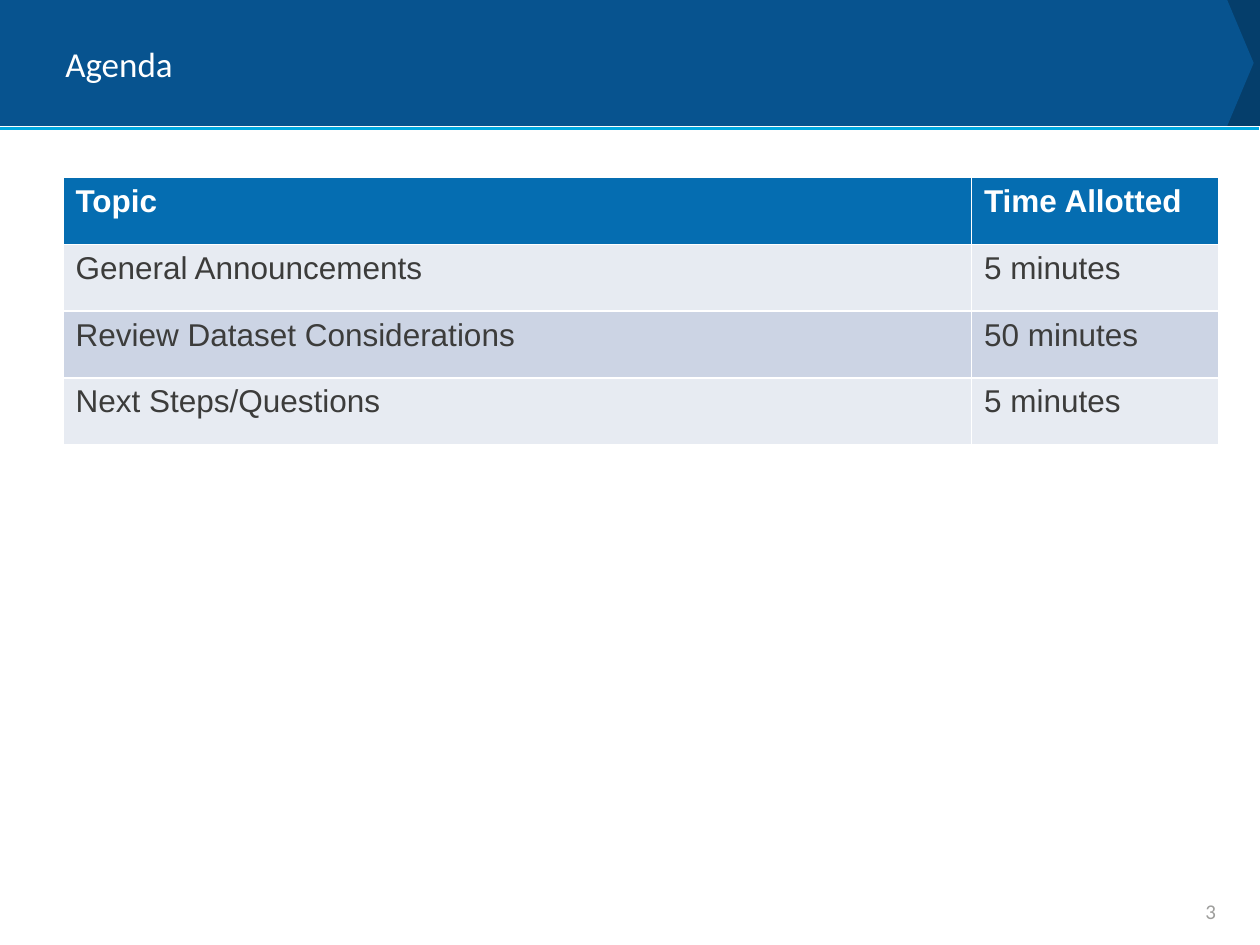
from dataclasses import dataclass

from lxml.etree import SubElement
from pptx import Presentation
from pptx.dml.color import RGBColor
from pptx.enum.shapes import MSO_CONNECTOR, MSO_SHAPE
from pptx.enum.text import MSO_ANCHOR, PP_ALIGN
from pptx.oxml.ns import qn
from pptx.util import Inches, Pt

COLORS = {
    "navy": "053E6B", "banner": "07538F", "accent": "00A8E1",
    "header": "056DB1", "light": "E7EBF2", "band": "CCD4E4",
    "white": "FFFFFF", "ink": "3C3C3B", "grey": "9E9E9C",
}
AGENDA = [
    ("Topic", "Time Allotted"),
    ("General Announcements", "5 minutes"),
    ("Review Dataset Considerations", "50 minutes"),
    ("Next Steps/Questions", "5 minutes"),
]
COL_WIDTHS = (7.21, 1.96)
ROW_HEIGHT = 0.53


@dataclass
class Banner:
    left: float
    width: float
    adj: float
    color: str


@dataclass
class Label:
    text: str
    box: tuple[float, float, float, float]
    size: int
    color: str
    align: PP_ALIGN


BANNERS = [Banner(9.55, 0.45, 0, "navy"), Banner(0, 9.95, 0.21, "banner")]
LABELS = [
    Label("Agenda", (0.42, 0.08, 9.17, 0.85), 20, "white", PP_ALIGN.LEFT),
    Label("3", (7.42, 7.11, 2.33, 0.25), 12, "grey", PP_ALIGN.RIGHT),
]


def rgb(name: str) -> RGBColor:
    """Look up a named colour."""
    return RGBColor.from_string(COLORS[name])


def write(p, text: str, color: str, **fmt) -> None:
    """Add a formatted run to a paragraph."""
    r = p.add_run()
    r.text = text
    for key, value in fmt.items():
        setattr(r.font, key, value)
    r.font.color.rgb = rgb(color)


def draw_banner(s, b: Banner) -> None:
    """Draw one pentagon of the title band."""
    sp = s.shapes.add_shape(MSO_SHAPE.PENTAGON, Inches(b.left), 0, Inches(b.width), Inches(1))
    sp.adjustments[0] = b.adj
    sp.shadow.inherit = False
    sp.fill.solid()
    sp.fill.fore_color.rgb = rgb(b.color)
    sp.line.fill.background()


def draw_rule(s) -> None:
    """Draw the accent line under the title band."""
    y = Inches(1.02)
    ln = s.shapes.add_connector(MSO_CONNECTOR.STRAIGHT, 0, y, Inches(9.99), y)
    ln.line.color.rgb = rgb("accent")
    ln.line.width = Pt(2.25)
    SubElement(ln._element.spPr, qn("a:effectLst"))


def draw_label(s, label: Label) -> None:
    """Draw a vertically centred line of text."""
    tf = s.shapes.add_textbox(*map(Inches, label.box)).text_frame
    for key, value in {"word_wrap": True, "vertical_anchor": MSO_ANCHOR.MIDDLE}.items():
        setattr(tf, key, value)
    p = tf.paragraphs[0]
    p.alignment = label.align
    write(p, label.text, label.color, name="Calibri", size=Pt(label.size))


def add_borders(cell) -> None:
    """Give a cell white borders on all sides."""
    tc_pr = cell._tc.get_or_add_tcPr()
    for side in ("L", "R", "T", "B"):
        ln = SubElement(tc_pr, qn(f"a:ln{side}"), w=str(Pt(1)))
        fill = SubElement(ln, qn("a:solidFill"))
        SubElement(fill, qn("a:srgbClr"), val=COLORS["white"])


def draw_agenda(s) -> None:
    """Draw the agenda table with banded rows."""
    rows, cols = len(AGENDA), len(COL_WIDTHS)
    table = s.shapes.add_table(
        rows, cols, Inches(0.5), Inches(1.41),
        Inches(sum(COL_WIDTHS)), Inches(rows * ROW_HEIGHT),
    ).table
    for col, width in zip(table.columns, COL_WIDTHS):
        col.width = Inches(width)
    for i, values in enumerate(AGENDA):
        head = i == 0
        color = "header" if head else "light" if i % 2 else "band"
        for j, text in enumerate(values):
            cell = table.cell(i, j)
            add_borders(cell)
            cell.fill.solid()
            cell.fill.fore_color.rgb = rgb(color)
            write(cell.text_frame.paragraphs[0], text, "white" if head else "ink",
                  name="Arial", size=Pt(18), bold=head)


def main() -> None:
    """Build the agenda slide."""
    prs = Presentation()
    prs.slide_width, prs.slide_height = Inches(10), Inches(7.5)
    s = prs.slides.add_slide(prs.slide_layouts[6])
    for banner in BANNERS:
        draw_banner(s, banner)
    draw_rule(s)
    for label in LABELS:
        draw_label(s, label)
    draw_agenda(s)
    prs.save("out.pptx")


if __name__ == "__main__":
    main()
